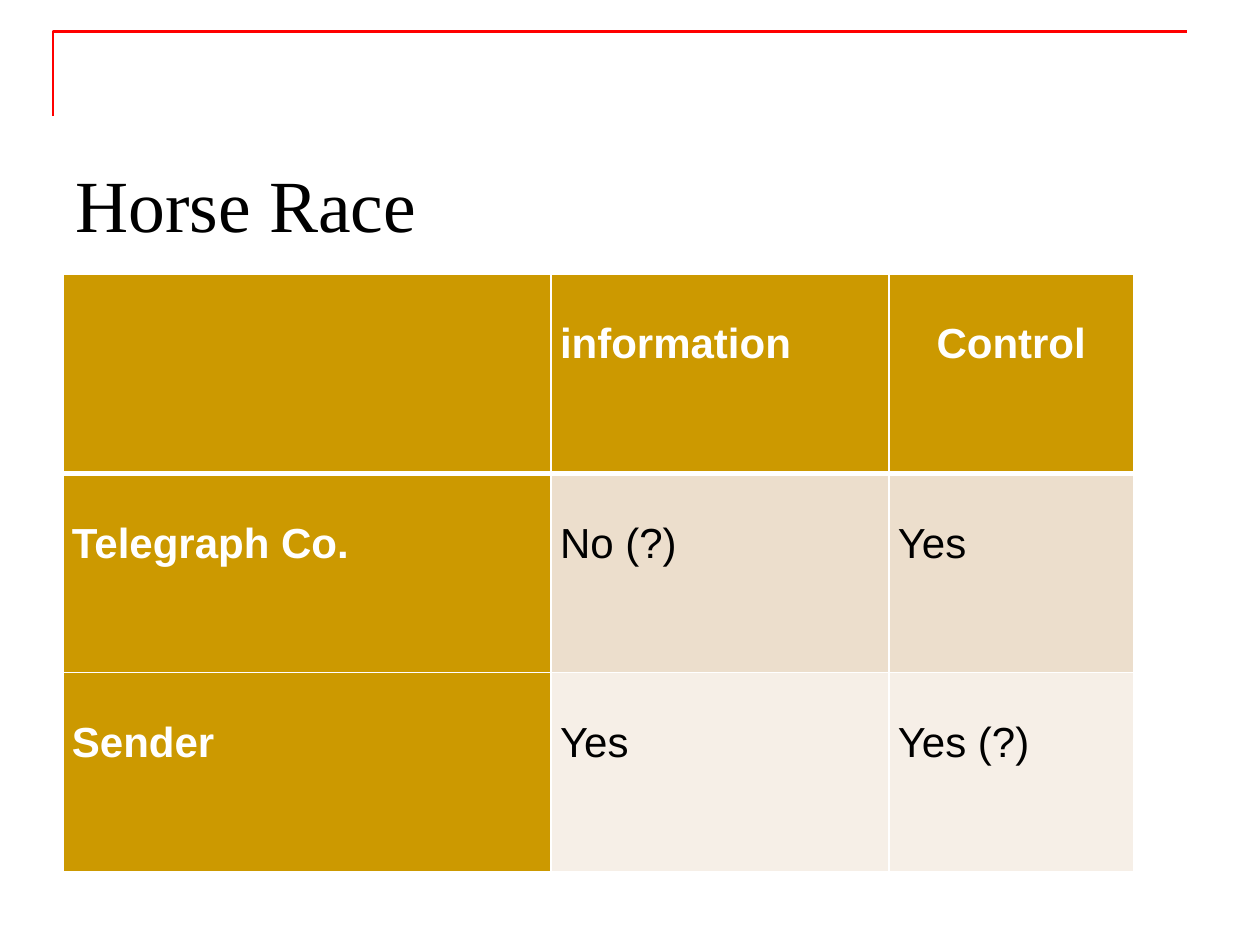
from lxml import etree
from pptx import Presentation
from pptx import util as u
from pptx.dml.color import RGBColor
from pptx.enum import text
from pptx.oxml import ns

COLORS = {
    "rule": "FF0000",
    "title": "000000",
    "body": "000000",
    "header": "CC9900",
    "header_text": "FFFFFF",
    "border": "FFFFFF",
    "band_dark": "ECDECC",
    "band_light": "F6EFE7",
}


def rgb(name):
    return RGBColor.from_string(COLORS[name])


def write(frame, words, size=24, font="Arial", color="body", bold=False,
          align=text.PP_ALIGN.LEFT, spacing=1.0):
    paragraph = frame.paragraphs[0]
    paragraph.alignment = align
    paragraph.line_spacing = spacing
    run = paragraph.add_run()
    run.text = words
    run.font.size = u.Pt(size)
    run.font.name = font
    run.font.bold = bold
    run.font.color.rgb = rgb(color)


prs = Presentation()
prs.slide_width, prs.slide_height = u.Cm(25.4), u.Cm(19.05)
slide = prs.slides.add_slide(prs.slide_layouts[6])

# Red corner rule
outline = slide.shapes.build_freeform(u.Cm(1.07), u.Cm(2.34))
outline.add_line_segments(
    [(u.Cm(1.07), u.Cm(0.64)), (u.Cm(23.93), u.Cm(0.64))], close=False)
corner = outline.convert_to_shape()
corner.shadow.inherit = False
corner.fill.background()
corner.line.color.rgb = rgb("rule")
corner.line.width = u.Pt(1.5)

# Title
title = slide.shapes.add_textbox(u.Cm(1.27), u.Cm(2.9), u.Cm(22.86), u.Cm(3.18))
title.text_frame.word_wrap = True
title.text_frame.margin_top = u.Cm(0.3)
write(title.text_frame, "Horse Race", size=42, font="Times New Roman", color="title")

# Table of who has information and control
rows = [
    ["", "information", "Control"],
    ["Telegraph Co.", "No (?)", "Yes"],
    ["Sender", "Yes", "Yes (?)"],
]
column_widths = [9.84, 6.81, 4.93]
row_height = 4.02
table = slide.shapes.add_table(
    len(rows), len(column_widths), u.Cm(1.27), u.Cm(5.52),
    u.Cm(sum(column_widths)), u.Cm(row_height * len(rows))).table
for column, width in zip(table.columns, column_widths):
    column.width = u.Cm(width)

for r, row in enumerate(rows):
    table.rows[r].height = u.Cm(row_height)
    for c, words in enumerate(row):
        cell = table.cell(r, c)
        heading = r == 0 or c == 0
        cell.margin_left = cell.margin_right = u.Cm(0.18)
        cell.margin_top = cell.margin_bottom = 0
        if words:
            centred = r == 0 and c == 2
            write(cell.text_frame, words, bold=heading, spacing=2.0,
                  color="header_text" if heading else "body",
                  align=text.PP_ALIGN.CENTER if centred else text.PP_ALIGN.LEFT)

        # Borders come before the fill; the one under the header row is heavier
        properties = cell._tc.get_or_add_tcPr()
        for side in ("lnL", "lnR", "lnT", "lnB"):
            heavy = (r, side) in ((0, "lnB"), (1, "lnT"))
            border = etree.SubElement(properties, ns.qn("a:" + side),
                                      w=str(u.Pt(3 if heavy else 1)))
            solid = etree.SubElement(border, ns.qn("a:solidFill"))
            etree.SubElement(solid, ns.qn("a:srgbClr"), val=COLORS["border"])
        cell.fill.solid()
        band = "band_dark" if r == 1 else "band_light"
        cell.fill.fore_color.rgb = rgb("header" if heading else band)

prs.save("out.pptx")
